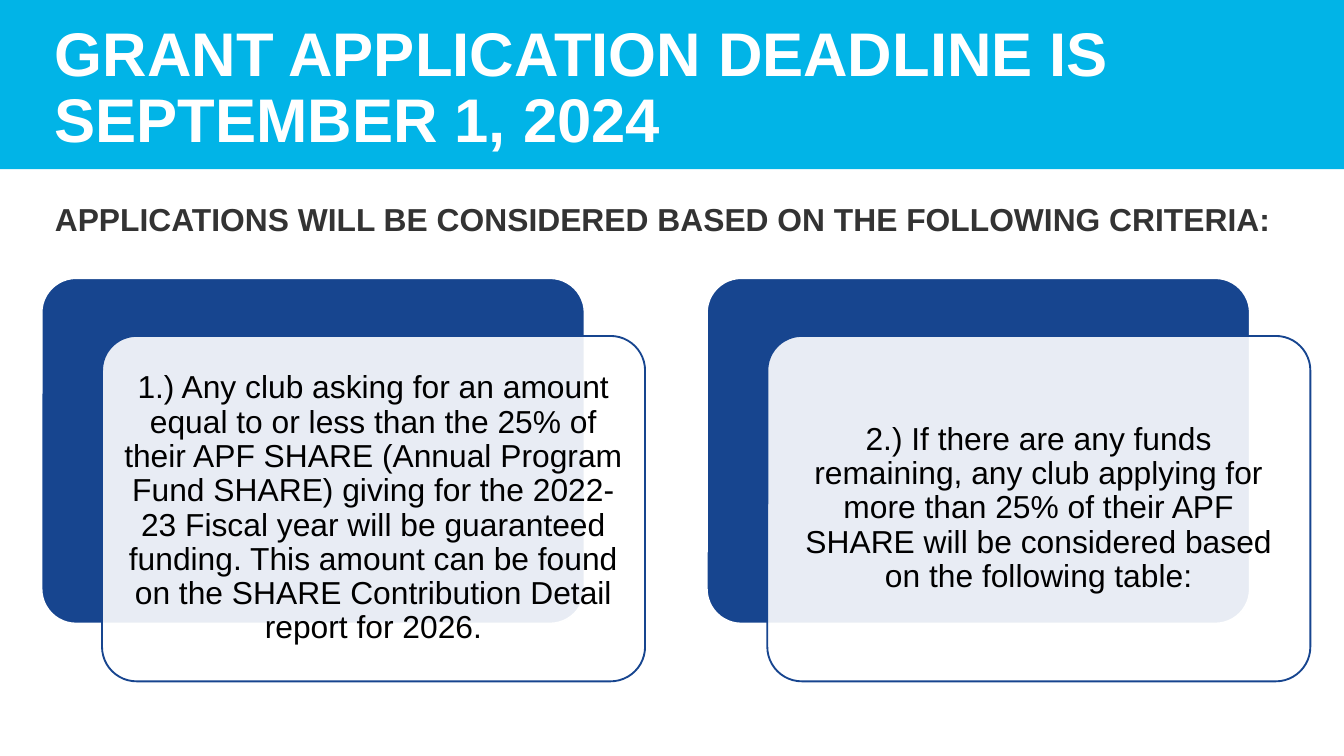
from dataclasses import dataclass

from lxml import etree
from pptx import Presentation
from pptx.dml.color import RGBColor
from pptx.enum.shapes import MSO_SHAPE
from pptx.enum.text import MSO_ANCHOR, PP_ALIGN
from pptx.oxml.ns import qn
from pptx.util import Inches, Pt

RECTANGLE = MSO_SHAPE.RECTANGLE
ROUNDED = MSO_SHAPE.ROUNDED_RECTANGLE
TOP, MIDDLE, BOTTOM = MSO_ANCHOR.TOP, MSO_ANCHOR.MIDDLE, MSO_ANCHOR.BOTTOM
LEFT, CENTER = PP_ALIGN.LEFT, PP_ALIGN.CENTER


@dataclass(frozen=True)
class Theme:
    font: str = "Arial"
    banner: RGBColor = RGBColor(0x01, 0xB4, 0xE7)
    navy: RGBColor = RGBColor(0x17, 0x45, 0x8F)
    white: RGBColor = RGBColor(0xFF, 0xFF, 0xFF)
    gray: RGBColor = RGBColor(0x33, 0x33, 0x33)
    black: RGBColor = RGBColor(0, 0, 0)
    title_size: int = 33
    body_size: int = 17
    line_spacing: float = 0.9


THEME = Theme()
WIDTH = 10
HEIGHT = WIDTH * 9 / 16
MARGIN = 0.31
CONTENT_WIDTH = 9.44
CARD_SHIFT = (0.45, 0.43)
CARD_GAP = 0.46
CRITERIA = [
    "1.) Any club asking for an amount equal to or less than the 25% of their "
    "APF SHARE (Annual Program Fund SHARE) giving for the 2022-23 Fiscal year "
    "will be guaranteed funding. This amount can be found on the SHARE "
    "Contribution Detail report for 2026.",
    "2.) If there are any funds remaining, any club applying for more than 25% "
    "of their APF SHARE will be considered based on the following table:",
]


def add_panel(slide, kind, box, fill, line=None, opacity=100):
    """Add a filled shape; opacity is a percentage."""
    shape = slide.shapes.add_shape(kind, *map(Inches, box))
    shape.shadow.inherit = False
    shape.fill.solid()
    shape.fill.fore_color.rgb = fill
    if opacity < 100:
        color = shape.fill._xPr.find(".//" + qn("a:srgbClr"))
        etree.SubElement(color, qn("a:alpha"), val=str(opacity * 1000))
    if line is None:
        shape.line.fill.background()
    else:
        shape.line.color.rgb = line
        shape.line.width = Pt(1)
    if kind == ROUNDED:
        shape.adjustments[0] = 0.1
    return shape


def write_text(shape, text, size, color, bold=False, align=LEFT, anchor=TOP,
               insets=(0.1, 0.05)):
    frame = shape.text_frame
    frame.word_wrap = True
    frame.vertical_anchor = anchor
    frame.margin_left = frame.margin_right = Inches(insets[0])
    frame.margin_top = frame.margin_bottom = Inches(insets[1])
    paragraph = frame.paragraphs[0]
    paragraph.alignment = align
    paragraph.line_spacing = THEME.line_spacing
    run = paragraph.add_run()
    run.text = text
    run.font.name = THEME.font
    run.font.size = Pt(size)
    run.font.bold = bold
    run.font.color.rgb = color


def add_banner(slide, box, text):
    add_panel(slide, RECTANGLE, box, THEME.banner)
    _, top, _, height = box
    title = slide.shapes.add_textbox(
        *map(Inches, (MARGIN, top, CONTENT_WIDTH, height)))
    write_text(title, text, THEME.title_size, THEME.white, bold=True,
               anchor=BOTTOM, insets=(0.1, 0.1))


def add_subtitle(slide, box, text):
    subtitle = slide.shapes.add_textbox(*map(Inches, box))
    write_text(subtitle, text, THEME.body_size, THEME.gray, bold=True)


def add_card(slide, box, text):
    """Layer a translucent text card over a navy one, both inside the box."""
    left, top, width, height = box
    shift_x, shift_y = CARD_SHIFT
    size = (width - shift_x, height - shift_y)
    add_panel(slide, ROUNDED, (left, top, *size), THEME.navy, THEME.white)
    front = add_panel(slide, ROUNDED, (left + shift_x, top + shift_y, *size),
                      THEME.white, THEME.navy, opacity=90)
    write_text(front, text, THEME.body_size, THEME.black, align=CENTER,
               anchor=MIDDLE, insets=(0.08, 0.07))


def add_criteria(slide, box, texts):
    left, top, width, height = box
    card_width = (width - CARD_GAP * (len(texts) - 1)) / len(texts)
    for column, text in enumerate(texts):
        card_left = left + column * (card_width + CARD_GAP)
        add_card(slide, (card_left, top, card_width, height), text)


def main():
    presentation = Presentation()
    presentation.slide_width = Inches(WIDTH)
    presentation.slide_height = Inches(HEIGHT)
    slide = presentation.slides.add_slide(presentation.slide_layouts[6])
    add_banner(slide, (0, 0, WIDTH, 1.26),
               "GRANT APPLICATION DEADLINE IS SEPTEMBER 1, 2024")
    add_subtitle(slide, (MARGIN, 1.47, CONTENT_WIDTH, 0.5),
                 "APPLICATIONS WILL BE CONSIDERED BASED ON THE FOLLOWING CRITERIA:")
    add_criteria(slide, (MARGIN, 2.07, CONTENT_WIDTH, 3), CRITERIA)
    presentation.save("out.pptx")


if __name__ == "__main__":
    main()
